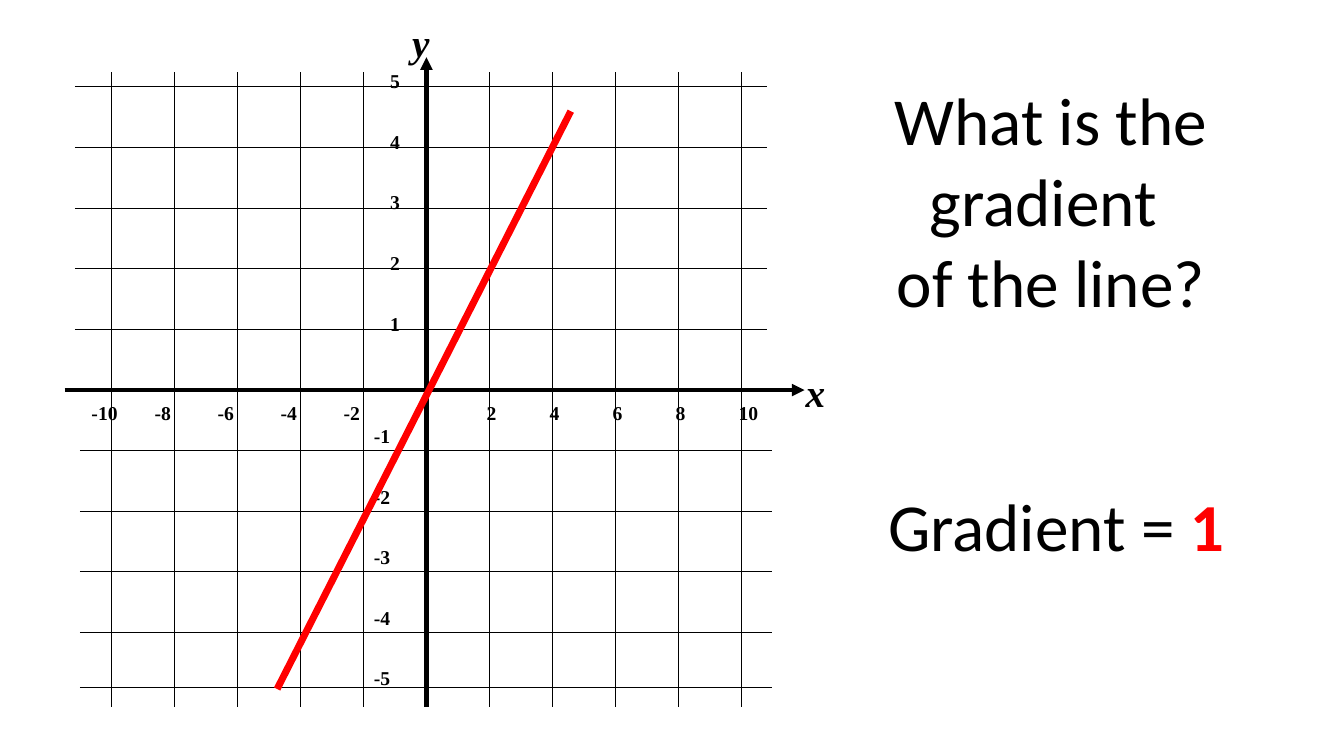
from dataclasses import dataclass

from lxml.etree import SubElement
from pptx import Presentation
from pptx.dml.color import RGBColor
from pptx.enum.shapes import MSO_CONNECTOR
from pptx.enum.text import MSO_AUTO_SIZE, PP_ALIGN
from pptx.oxml.ns import qn
from pptx.util import Inches, Pt


@dataclass(frozen=True)
class Theme:
    ink: RGBColor = RGBColor(0, 0, 0)
    accent: RGBColor = RGBColor(255, 0, 0)
    graph_font: str = "Times New Roman"
    prompt_font: str = "Calibri"
    number_size: int = 14
    axis_size: int = 28
    prompt_size: int = 48
    hairline: float = 0.25
    grid_line: float = 0.75
    axis_line: float = 3
    graph_line: float = 5


class GraphPage:
    """Places elements in columns right of, and rows above, the graph's origin."""

    ORIGIN_X, ORIGIN_Y = 4.23, 3.87
    COLUMN, ROW = 0.625, 0.6015

    def __init__(self, deck, theme):
        self.theme = theme
        self.page = deck.slides.add_slide(deck.slide_layouts[6])

    def point(self, column, row):
        return (Inches(self.ORIGIN_X + column * self.COLUMN),
                Inches(self.ORIGIN_Y - row * self.ROW))

    def line(self, start, end, width, color=None, arrow=False):
        line = self.page.shapes.add_connector(
            MSO_CONNECTOR.STRAIGHT, *self.point(*start), *self.point(*end))
        line.line.color.rgb = color or self.theme.ink
        line.line.width = Pt(width)
        properties = line._element.spPr
        if arrow:
            SubElement(properties.find(qn("a:ln")), qn("a:tailEnd"), type="triangle")
        SubElement(properties, qn("a:effectLst"))

    def text(self, corner, columns, rows, wording, font, size):
        """Add a text box at its top left corner and return its text frame."""
        box = self.page.shapes.add_textbox(
            *self.point(*corner), Inches(columns * self.COLUMN), Inches(rows * self.ROW))
        frame = box.text_frame
        frame.word_wrap = True
        frame.text = wording
        for para in frame.paragraphs:
            for span in para.runs:
                self.style(span, font, size)
        return frame

    def style(self, span, font, size):
        span.font.name = font
        span.font.size = Pt(size)
        span.font.color.rgb = self.theme.ink

    def graph_text(self, corner, columns, rows, wording, size):
        frame = self.text(corner, columns, rows, wording, self.theme.graph_font, size)
        frame.margin_left = frame.margin_right = Inches(0.04)
        frame.margin_top = frame.margin_bottom = Inches(0.04)
        para = frame.paragraphs[0]
        para.runs[0].font.bold = True
        return para

    def number(self, corner, value):
        columns = 1.06 if value < 0 else 0.22 + 0.16 * len(str(value))
        self.graph_text(corner, columns, 0.5, str(value), self.theme.number_size)

    def axis_name(self, corner, name):
        para = self.graph_text(corner, 0.88, 0.62, name, self.theme.axis_size)
        para.alignment = PP_ALIGN.CENTER
        para.runs[0].font.italic = True

    def prompt(self, corner, columns, rows, wording):
        frame = self.text(corner, columns, rows, wording,
                          self.theme.prompt_font, self.theme.prompt_size)
        frame.auto_size = MSO_AUTO_SIZE.SHAPE_TO_FIT_TEXT
        for para in frame.paragraphs:
            para.alignment = PP_ALIGN.CENTER
        return frame.paragraphs[-1]

    def answer(self, para, wording):
        span = para.add_run()
        span.text = wording
        self.style(span, self.theme.prompt_font, self.theme.prompt_size)
        span.font.color.rgb = self.theme.accent
        span.font.bold = True


def draw_grid(graph):
    theme = graph.theme
    for step in (-5, -4, -3, -2, -1, 1, 2, 3, 4, 5):
        positive = step > 0
        width = theme.hairline if positive else theme.grid_line
        graph.line((step, 5.24), (step, -5.22), width)

        row = max(step, -4.9)
        left, right = (-5.58, 5.41) if positive else (-5.5, 5.49)
        graph.line((left, row), (right, row), theme.grid_line)

        graph.number((step - (0.11 if positive else 0.38), -0.12), 2 * step)
        if positive:
            graph.number((-0.64, step + 0.36), step)
        else:
            graph.number((-0.9, step + 0.51), step)


def main():
    deck = Presentation()
    deck.slide_width, deck.slide_height = Inches(13.33), Inches(7.5)
    theme = Theme()
    graph = GraphPage(deck, theme)

    graph.line((0, -5.22), (0, 5.49), theme.axis_line, arrow=True)
    graph.line((-5.74, 0), (6, 0), theme.axis_line, arrow=True)
    draw_grid(graph)
    graph.axis_name((-0.53, 6.2), "y")
    graph.axis_name((5.73, 0.43), "x")
    graph.line((-2.37, -4.93), (2.29, 4.6), theme.graph_line, theme.accent)

    graph.prompt((6.11, 5.22), 7.6, 4.19, "What is the gradient \nof the line?")
    result = graph.prompt((6.74, -1.48), 6.5, 1.51, "Gradient = ")
    graph.answer(result, "1")

    deck.save("out.pptx")


if __name__ == "__main__":
    main()
